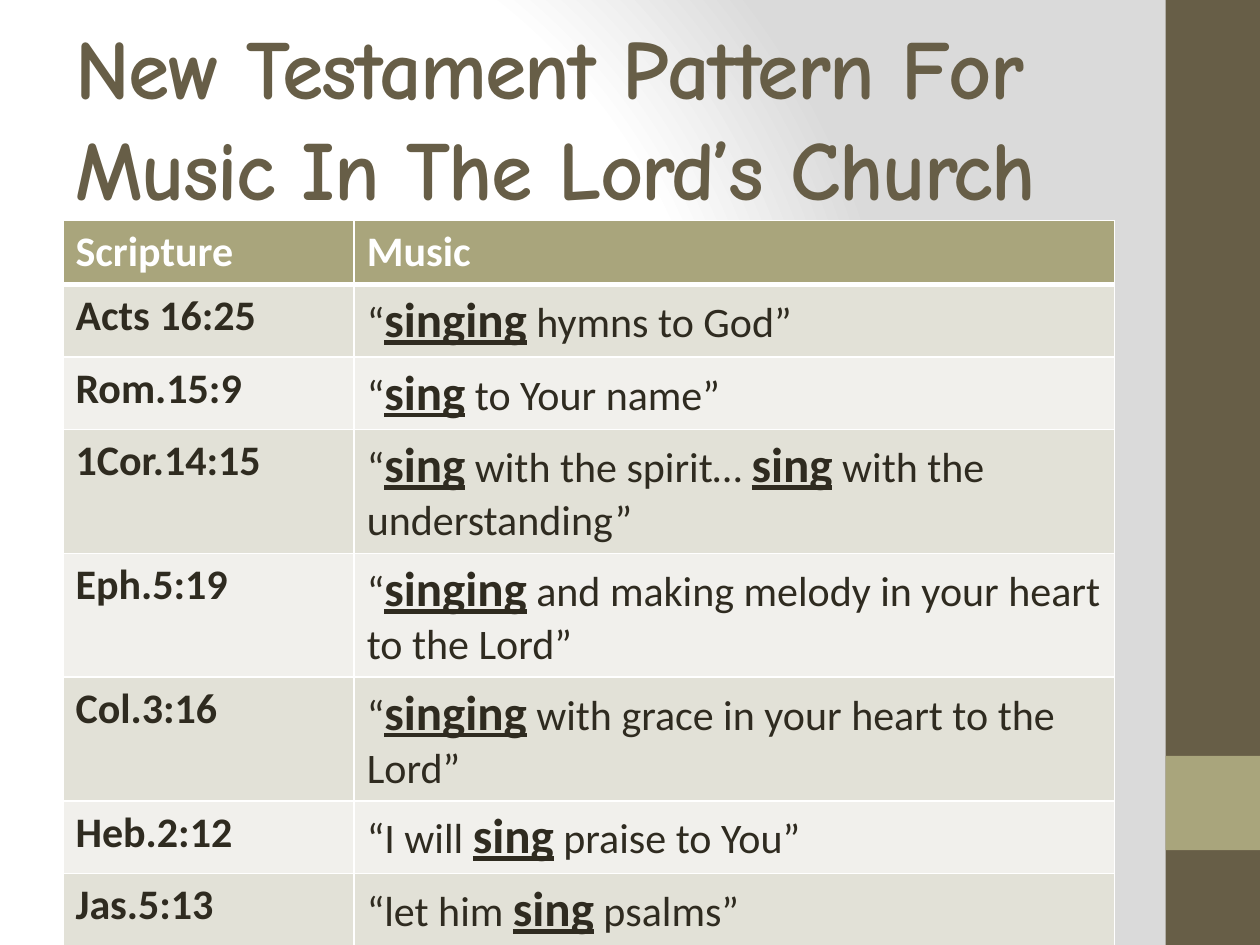
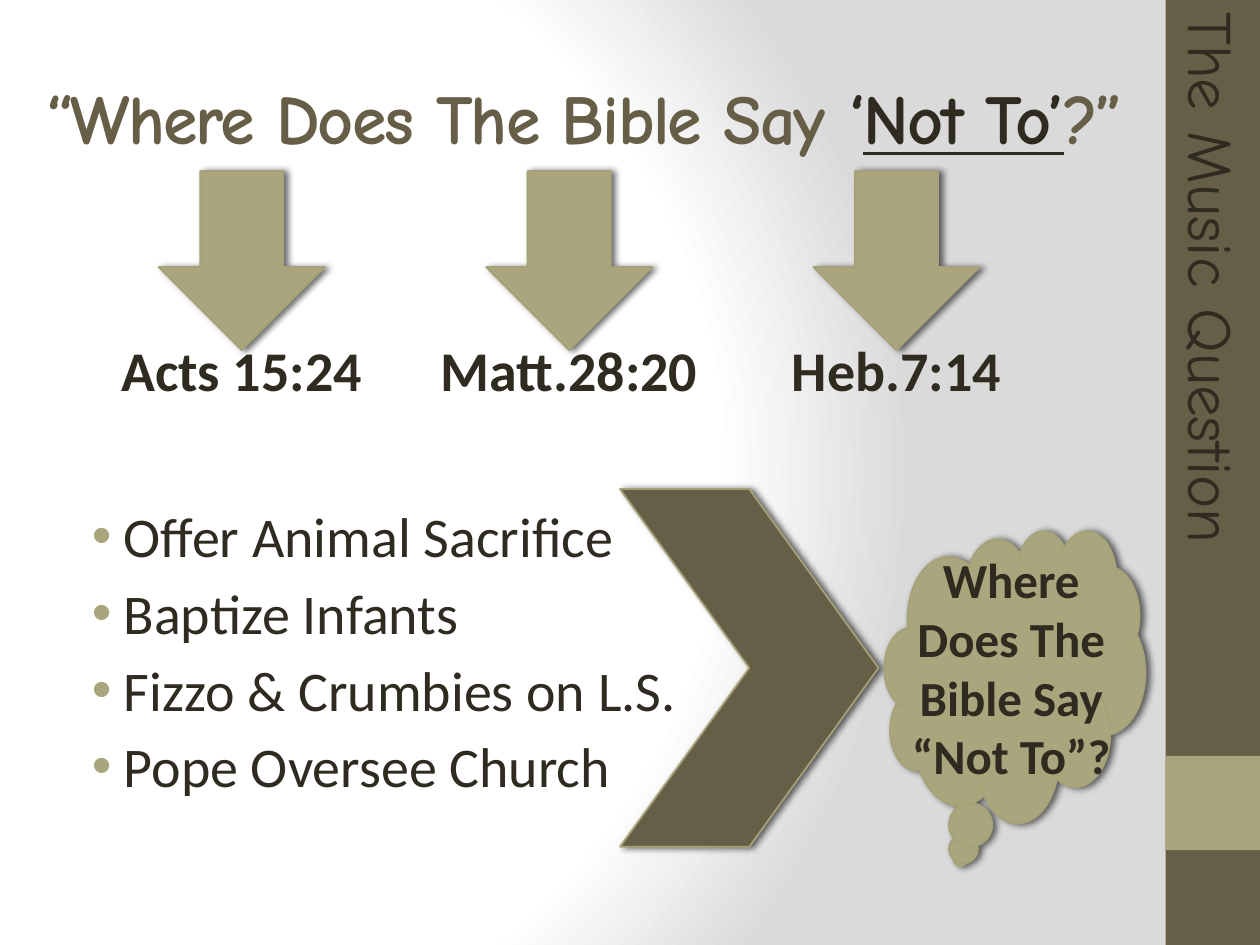
from dataclasses import dataclass

from lxml import etree
from pptx import Presentation
from pptx.dml.color import RGBColor
from pptx.enum.shapes import MSO_SHAPE
from pptx.enum.text import MSO_ANCHOR, MSO_AUTO_SIZE, PP_ALIGN
from pptx.oxml import parse_xml
from pptx.oxml.ns import qn
from pptx.util import Cm, Pt

RECTANGLE = MSO_SHAPE.RECTANGLE
CHEVRON = MSO_SHAPE.CHEVRON
CLOUD = MSO_SHAPE.CLOUD_CALLOUT
DOWN_ARROW = MSO_SHAPE.DOWN_ARROW
LEFT = PP_ALIGN.LEFT
CENTER = PP_ALIGN.CENTER
MIDDLE = MSO_ANCHOR.MIDDLE
TOP = MSO_ANCHOR.TOP
NO_FIT = MSO_AUTO_SIZE.NONE
DRAWING = "http://schemas.openxmlformats.org/drawingml/2006/main"
LAYOUT_CONTENT = 1
LAYOUT_TITLE_ONLY = 5


class Theme:
    white = "FFFFFF"
    mist = "DADADA"
    brown = "675E47"
    olive = "A9A57C"
    olive_edge = "A6A278"
    ink = "2F2B20"
    stripes = ("E2E1D7", "F1F0EC")
    title = {"name": "Comic Neue", "size": Pt(48), "bold": True, "color": brown}
    question = title | {"size": Pt(40)}
    side = {"name": "Comic Neue", "size": Pt(36), "bold": False, "color": ink}
    body = {"name": "Calibri", "size": Pt(32), "bold": False, "color": ink}
    label = body | {"bold": True}
    thought = label | {"size": Pt(28)}
    cell = body | {"size": Pt(24)}
    reference = cell | {"bold": True}
    header = reference | {"color": white}
    emphasis = thought | {"underline": True}


@dataclass
class Box:
    left: float
    top: float
    width: float
    height: float

    def inner(self, left, top, width, height):
        return Box(self.left + left, self.top + top, width, height)

    def lengths(self):
        return [Cm(value) for value in (self.left, self.top, self.width, self.height)]


PAGE = Box(0, 0, 25.4, 19.05)
TITLE = Box(1.27, 0.76, 21.16, 3.18)
WIDE_TITLE = Box(0, 0.76, 23.57, 3.18)
SIDE_BAND = Box(23.5, 0, 1.9, 19.05)
TABLE = Box(1.27, 4.45, 21.2, 8.32)
ARROWS = Box(1.55, 3.45, 19.85, 4.82)
PRACTICES = Box(1.27, 9.98, 21.16, 7.8)
CHALLENGE = Box(12.5, 9.86, 10.59, 7.21)

SCRIPTURES = [
    ("Acts 16:25", "“*singing* hymns to God”"),
    ("Rom.15:9", "“*sing* to Your name”"),
    ("1Cor.14:15", "“*sing* with the spirit… *sing* with the understanding”"),
    ("Eph.5:19", "“*singing* and making melody in your heart to the Lord”"),
    ("Col.3:16", "“*singing* with grace in your heart to the Lord”"),
    ("Heb.2:12", "“I will *sing* praise to You”"),
    ("Jas.5:13", "“let him *sing* psalms”"),
]


def add_element(parent, tag, **attributes):
    element = etree.SubElement(parent, qn(tag))
    for name, value in attributes.items():
        element.set(name, str(value))
    return element


def add_color(parent, color):
    return add_element(parent, "a:srgbClr", val=color)


def add_span(para, text, style):
    span = para.add_run()
    span.text = text
    for name, value in style.items():
        if name == "color":
            span.font.color.rgb = RGBColor.from_string(value)
        else:
            setattr(span.font, name, value)
    return span


def place(shape, box):
    for name, value in zip(("left", "top", "width", "height"), box.lengths()):
        setattr(shape, name, value)


def add_filled(page, kind, box, fill):
    shape = page.shapes.add_shape(kind, *box.lengths())
    shape.shadow.inherit = False
    shape.fill.solid()
    shape.fill.fore_color.rgb = RGBColor.from_string(fill)
    shape.line.fill.background()
    return shape


def add_raised(page, kind, box, fill):
    shape = add_filled(page, kind, box, fill)
    shape.line.color.rgb = RGBColor.from_string(Theme.olive_edge)
    shape.line.width = Pt(1)
    effects = shape.element.spPr.find(qn("a:effectLst"))
    shadow = add_element(effects, "a:outerShdw", blurRad=Pt(4), dist=Pt(2), dir=0)
    add_element(add_color(shadow, "000000"), "a:alpha", val=60000)


def add_text(page, box, text, style, align=CENTER):
    shape = page.shapes.add_textbox(*box.lengths())
    shape.text_frame.word_wrap = True
    para = shape.text_frame.paragraphs[0]
    para.alignment = align
    add_span(para, text, style)
    return shape


def paint_background(master):
    master.background.fill.solid()
    stops = "".join(
        f'<a:gs pos="{position}"><a:srgbClr val="{color}"/></a:gs>'
        for position, color in ((0, Theme.white), (75000, Theme.white), (100000, Theme.mist))
    )
    gradient = parse_xml(
        f'<a:gradFill xmlns:a="{DRAWING}" rotWithShape="1"><a:gsLst>{stops}</a:gsLst>'
        '<a:path path="circle"><a:fillToRect l="20000" t="50000" r="100000" b="50000"/>'
        "</a:path></a:gradFill>"
    )
    solid = master.element.find(".//" + qn("p:bgPr")).find(qn("a:solidFill"))
    solid.getparent().replace(solid, gradient)


def add_side_band(page, box):
    add_filled(page, RECTANGLE, box, Theme.brown)
    add_filled(page, RECTANGLE, box.inner(0, 15.24, box.width, box.width), Theme.olive)


def fill_title(page, box, spans, align):
    title = page.shapes.title
    place(title, box)
    frame = title.text_frame
    frame.auto_size = NO_FIT
    frame.vertical_anchor = MIDDLE
    para = frame.paragraphs[0]
    para.alignment = align
    for text, style in spans:
        span = add_span(para, text, style)
        span.font.size = style["size"]
        span.font._element.set("spc", "-100")


def start_page(deck, layout, box, spans, align):
    page = deck.slides.add_slide(deck.slide_layouts[layout])
    add_side_band(page, SIDE_BAND)
    fill_title(page, box, spans, align)
    return page


def fill_cell(cell, text, style, fill, top_line, bottom_line):
    para = cell.text_frame.paragraphs[0]
    for index, part in enumerate(text.split("*")):
        add_span(para, part, Theme.emphasis if index % 2 else style)
    properties = cell._tc.get_or_add_tcPr()
    for side, width in zip("LRTB", (1, 1, top_line, bottom_line)):
        line = add_element(properties, f"a:ln{side}", w=Pt(width))
        add_color(add_element(line, "a:solidFill"), Theme.white)
    cell.fill.solid()
    cell.fill.fore_color.rgb = RGBColor.from_string(fill)


def add_scripture_table(page, box):
    rows = [("Scripture", "Music")] + SCRIPTURES
    table = page.shapes.add_table(len(rows), 2, *box.lengths()).table
    reference_width = 5.87
    for column, width in zip(table.columns, (reference_width, box.width - reference_width)):
        column.width = Cm(width)
    for index, texts in enumerate(rows):
        table.rows[index].height = Cm(box.height / len(rows))
        styles = (Theme.reference, Theme.cell) if index else (Theme.header, Theme.header)
        fill = Theme.stripes[(index - 1) % 2] if index else Theme.olive
        for column, (text, style) in enumerate(zip(texts, styles)):
            fill_cell(table.cell(index, column), text, style, fill,
                      3 if index == 1 else 1, 1 if index else 3)


def add_arrow_row(page, box, references):
    pitch, label_width = 6.6, 6.65
    for index, reference in enumerate(references):
        left = index * pitch
        add_text(page, box.inner(left, 3.19, label_width, 1.63), reference, Theme.label)
        add_raised(page, DOWN_ARROW, box.inner(left + 1.65, 0, 3.35, 3.61), Theme.olive)


def fill_practices(page, box, practices):
    body = page.placeholders[1]
    place(body, box)
    frame = body.text_frame
    frame.auto_size = NO_FIT
    frame.vertical_anchor = TOP
    for index, practice in enumerate(practices):
        para = frame.add_paragraph() if index else frame.paragraphs[0]
        properties = para._p.get_or_add_pPr()
        properties.set("marL", str(Cm(0.97)))
        properties.set("indent", str(Cm(-0.64)))
        add_color(add_element(properties, "a:buClr"), Theme.olive)
        add_element(properties, "a:buFont", typeface="Arial")
        add_element(properties, "a:buChar", char="•")
        para.space_before = Pt(5.5 if index else 0)
        add_span(para, practice, Theme.body)


def add_challenge(page, box):
    add_raised(page, CHEVRON, box.inner(0, 0, 5.21, box.height), Theme.brown)
    add_raised(page, CLOUD, box.inner(5.33, 0.83, 5.26, 5.89), Theme.olive)
    add_text(page, box.inner(5.33, 1.09, 5.11, 5.05),
             "Where Does The Bible Say “Not To”?", Theme.thought)


def add_side_heading(page, band, text):
    length, depth = 15.24, 1.8
    middle = band.inner((band.width - length) / 2 + 0.01, (length - depth) / 2, length, depth)
    add_text(page, middle, text, Theme.side, LEFT).rotation = 90


def build_pattern_page(deck):
    spans = [("New Testament Pattern For Music In The Lord’s Church", Theme.title)]
    page = start_page(deck, LAYOUT_TITLE_ONLY, TITLE, spans, LEFT)
    add_scripture_table(page, TABLE)


def build_question_page(deck):
    dark = Theme.question | {"color": Theme.ink}
    spans = [
        ("“Where Does The Bible Say ", Theme.question),
        ("‘", dark),
        ("Not To’", dark | {"underline": True}),
        ("?”", Theme.question),
    ]
    page = start_page(deck, LAYOUT_CONTENT, WIDE_TITLE, spans, CENTER)
    add_challenge(page, CHALLENGE)
    fill_practices(page, PRACTICES, [
        "Offer Animal Sacrifice",
        "Baptize Infants",
        "Fizzo & Crumbies on L.S.",
        "Pope Oversee Church",
    ])
    add_side_heading(page, SIDE_BAND, "The Music Question")
    add_arrow_row(page, ARROWS, ["Acts 15:24", "Matt.28:20", "Heb.7:14"])


def main():
    deck = Presentation()
    deck.slide_width, deck.slide_height = Cm(PAGE.width), Cm(PAGE.height)
    paint_background(deck.slide_master)
    build_pattern_page(deck)
    build_question_page(deck)
    deck.save("out.pptx")


if __name__ == "__main__":
    main()
